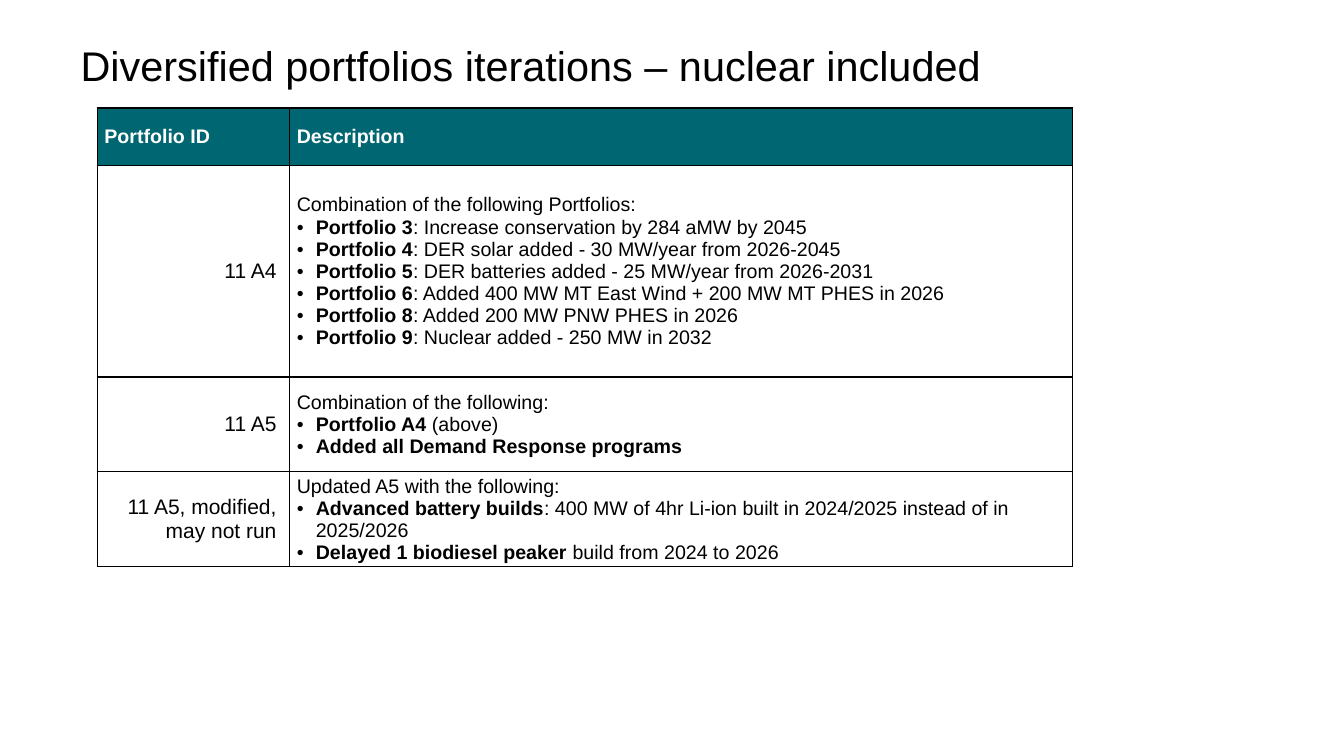
from lxml import etree
from pptx import Presentation
from pptx.dml.color import RGBColor
from pptx.enum.text import MSO_ANCHOR, MSO_AUTO_SIZE, PP_ALIGN
from pptx.oxml.ns import qn
from pptx.util import Cm, Pt

MIDDLE = MSO_ANCHOR.MIDDLE
LEFT, RIGHT = PP_ALIGN.LEFT, PP_ALIGN.RIGHT
NO_AUTOFIT = MSO_AUTO_SIZE.NONE
TITLE_ONLY = 5
COLORS = {"teal": "006671", "black": "000000", "white": "FFFFFF"}
HEADERS = ["Portfolio ID", "Description"]
COLUMN_WIDTHS = [4.85, 19.74]
ROW_HEIGHTS = [1.45, 5.33, 2.39, 2.39]
BULLET_INDENT = Cm(0.48)

# Portfolio ID, introduction, bullets as (bold text, plain text)
PORTFOLIOS = [
    ("11 A4", "Combination of the following Portfolios:", [
        ("Portfolio 3", ": Increase conservation by 284 aMW by 2045"),
        ("Portfolio 4", ": DER solar added - 30 MW/year from 2026-2045"),
        ("Portfolio 5", ": DER batteries added - 25 MW/year from 2026-2031"),
        ("Portfolio 6", ": Added 400 MW MT East Wind + 200 MW MT PHES in 2026"),
        ("Portfolio 8", ": Added 200 MW PNW PHES in 2026"),
        ("Portfolio 9", ": Nuclear added - 250 MW in 2032"),
    ]),
    ("11 A5", "Combination of the following:", [
        ("Portfolio A4 ", "(above)"),
        ("Added all Demand Response programs", ""),
    ]),
    ("11 A5, modified, may not run", "Updated A5 with the following:", [
        ("Advanced battery builds",
         ": 400 MW of 4hr Li-ion built in 2024/2025 instead of in 2025/2026"),
        ("Delayed 1 biodiesel peaker", " build from 2024 to 2026"),
    ]),
]


def add_span(para, text, size, color="black", bold=False):
    span = para.add_run()
    span.text = text
    span.font.name = "Arial"
    span.font.size = Pt(size)
    span.font.bold = bold
    span.font.color.rgb = RGBColor.from_string(COLORS[color])


def style_cell(cell, margins, fill=None):
    """Set margins (left, top, right, bottom in cm), black borders and fill."""
    cell.vertical_anchor = MIDDLE
    (cell.margin_left, cell.margin_top,
     cell.margin_right, cell.margin_bottom) = [Cm(margin) for margin in margins]
    properties = cell._tc.get_or_add_tcPr()
    for side in ("lnL", "lnR", "lnT", "lnB"):
        line = etree.SubElement(properties, qn(f"a:{side}"), w=str(Pt(1)))
        solid = etree.SubElement(line, qn("a:solidFill"))
        etree.SubElement(solid, qn("a:srgbClr"), val=COLORS["black"])
    if fill:
        cell.fill.solid()
        cell.fill.fore_color.rgb = RGBColor.from_string(COLORS[fill])
    else:
        cell.fill.background()


deck = Presentation()
deck.slide_width, deck.slide_height = Cm(33.87), Cm(19.05)
page = deck.slides.add_slide(deck.slide_layouts[TITLE_ONLY])

# Title
title = page.shapes.title
title.left, title.top, title.width, title.height = Cm(1.7), Cm(1.02), Cm(29.31), Cm(1.45)
frame = title.text_frame
frame.word_wrap = True
frame.auto_size = NO_AUTOFIT
frame.vertical_anchor = MIDDLE
frame.margin_left = frame.margin_right = Cm(0.33)
frame.margin_top = frame.margin_bottom = Cm(0.18)
heading = frame.paragraphs[0]
heading.alignment = LEFT
heading.line_spacing = 0.8
add_span(heading, "Diversified portfolios iterations – nuclear included", 29.6)

# Portfolio table
table = page.shapes.add_table(
    len(ROW_HEIGHTS), len(COLUMN_WIDTHS), Cm(2.45), Cm(2.72),
    Cm(sum(COLUMN_WIDTHS)), Cm(sum(ROW_HEIGHTS))).table
table.first_row = True
table.horz_banding = False
for column, width in zip(table.columns, COLUMN_WIDTHS):
    column.width = Cm(width)
for row, height in zip(table.rows, ROW_HEIGHTS):
    row.height = Cm(height)

TEXT_MARGINS = (0.18, 0.08, 0.18, 0.08)
ID_MARGINS = (0, 0, 0.33, 0)

for index, header in enumerate(HEADERS):
    cell = table.cell(0, index)
    style_cell(cell, TEXT_MARGINS, "teal")
    add_span(cell.text_frame.paragraphs[0], header, 14, "white", True)

for index, (portfolio, introduction, bullets) in enumerate(PORTFOLIOS, start=1):
    id_cell, description_cell = table.cell(index, 0), table.cell(index, 1)
    style_cell(id_cell, ID_MARGINS)
    para = id_cell.text_frame.paragraphs[0]
    para.alignment = RIGHT
    add_span(para, portfolio, 15)

    style_cell(description_cell, TEXT_MARGINS)
    frame = description_cell.text_frame
    add_span(frame.paragraphs[0], introduction, 14)
    for bold_text, plain_text in bullets:
        para = frame.add_paragraph()
        properties = para._p.get_or_add_pPr()
        properties.set("marL", str(BULLET_INDENT))
        properties.set("indent", str(-BULLET_INDENT))
        etree.SubElement(properties, qn("a:buFont"), typeface="Arial")
        etree.SubElement(properties, qn("a:buChar"), char="•")
        add_span(para, bold_text, 14, bold=True)
        if plain_text:
            add_span(para, plain_text, 14)

deck.save("out.pptx")
